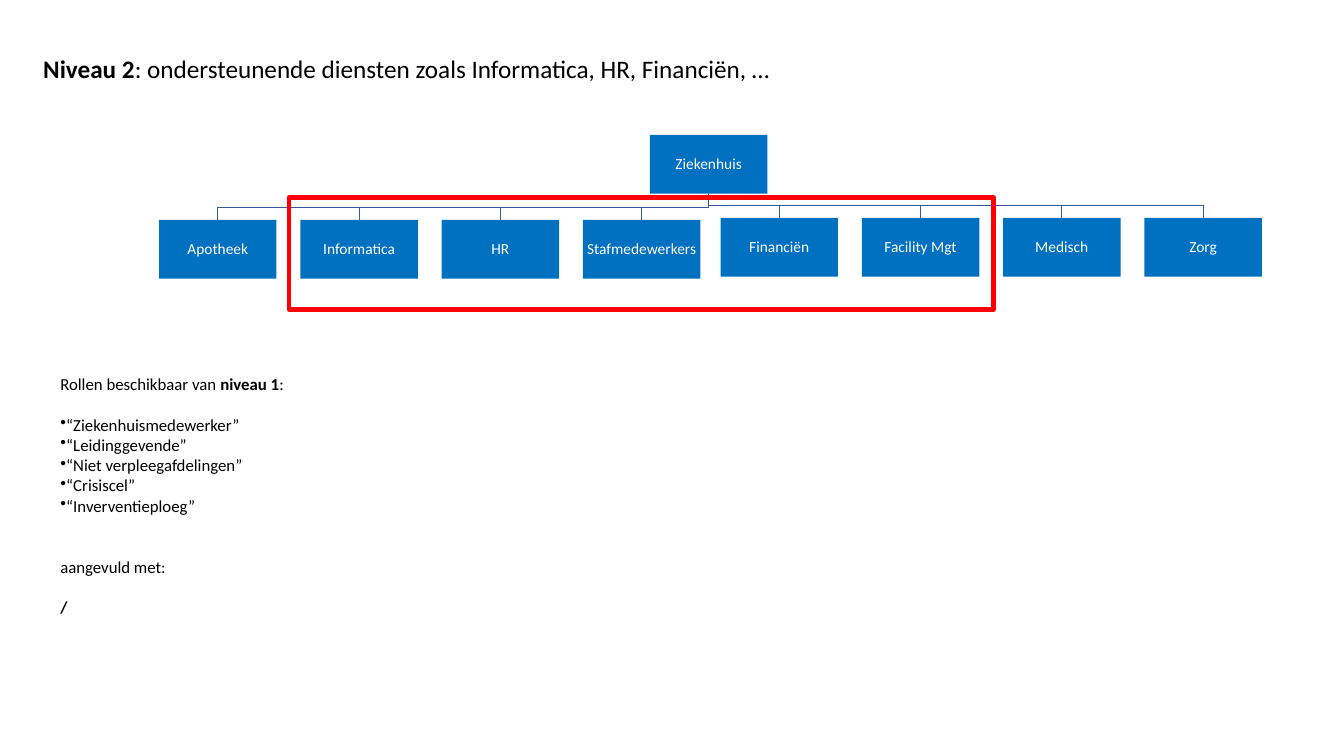
"""Build the hospital organisation slide for level 2."""
from dataclasses import dataclass

from lxml import etree
from pptx import Presentation
from pptx.dml.color import RGBColor
from pptx.enum.shapes import MSO_SHAPE
from pptx.enum.text import MSO_ANCHOR, MSO_AUTO_SIZE, PP_ALIGN
from pptx.oxml.ns import qn
from pptx.util import Cm, Pt

RECTANGLE = MSO_SHAPE.RECTANGLE
MIDDLE = MSO_ANCHOR.MIDDLE
CENTER = PP_ALIGN.CENTER
GROW = MSO_AUTO_SIZE.SHAPE_TO_FIT_TEXT


@dataclass(frozen=True)
class Theme:
    """Colours, font and type sizes of the slide."""
    font: str = "Calibri"
    unit_fill: RGBColor = RGBColor(0x00, 0x70, 0xC0)
    unit_text: RGBColor = RGBColor(0xFF, 0xFF, 0xFF)
    branch: RGBColor = RGBColor(0x36, 0x5B, 0x9D)
    highlight: RGBColor = RGBColor(0xFF, 0x00, 0x00)
    text: RGBColor = RGBColor(0x00, 0x00, 0x00)
    title_size: Pt = Pt(18)
    body_size: Pt = Pt(12)
    unit_size: Pt = Pt(11)
    text_line: Pt = Pt(14.65)


THEME = Theme()

UNIT_WIDTH, UNIT_HEIGHT = Cm(2.96), Cm(1.48)
UNIT_PITCH = Cm(3.56)
UNIT_INSET = Cm(0.03)
BRANCH_DROP = Cm(0.31)
ROOT_LEFT, ROOT_TOP = Cm(16.38), Cm(3.4)
UNIT_ROWS = [
    (Cm(4.01), Cm(5.54), ["Apotheek", "Informatica", "HR", "Stafmedewerkers"]),
    (Cm(18.16), Cm(5.49), ["Financiën", "Facility Mgt", "Medisch", "Zorg"]),
]
ROLES = ["“Ziekenhuismedewerker”", "“Leidinggevende”", "“Niet verpleegafdelingen”",
         "“Crisiscel”", "“Inverventieploeg”"]


def style_font(font, size, color, bold=False):
    """Apply the theme font with a size, colour and weight."""
    font.name = THEME.font
    font.size = size
    font.color.rgb = color
    font.bold = bold


def add_spans(para, spans, size):
    """Fill a paragraph with (text, bold) spans."""
    for text, bold in spans:
        span = para.add_run()
        span.text = text
        style_font(span.font, size, THEME.text, bold)


def add_text_box(page, left, top, width, height, wrap):
    """Add an empty growing text box and return its text frame."""
    frame = page.shapes.add_textbox(left, top, width, height).text_frame
    frame.word_wrap = wrap
    frame.auto_size = GROW
    return frame


def add_bullet(para):
    """Give a paragraph a hanging round bullet."""
    properties = para._p.get_or_add_pPr()
    properties.set("marL", "0")
    properties.set("indent", str(-Cm(0.79)))
    etree.SubElement(properties, qn("a:buChar")).set("char", "•")


def add_unit(page, left, top, name):
    """Add one box of the organisation chart."""
    box = page.shapes.add_shape(RECTANGLE, left, top, UNIT_WIDTH, UNIT_HEIGHT)
    box.shadow.inherit = False
    box.fill.solid()
    box.fill.fore_color.rgb = THEME.unit_fill
    box.line.fill.background()
    frame = box.text_frame
    frame.word_wrap = True
    frame.vertical_anchor = MIDDLE
    frame.margin_left = frame.margin_right = UNIT_INSET
    frame.margin_top = frame.margin_bottom = UNIT_INSET
    frame.text = name
    para = frame.paragraphs[0]
    para.alignment = CENTER
    para.line_spacing = 0.9
    style_font(para.runs[0].font, THEME.unit_size, THEME.unit_text)


def add_branch(page, left, top):
    """Draw the elbow line from the root box to the unit at left, top."""
    start_x, start_y = ROOT_LEFT + UNIT_WIDTH // 2, ROOT_TOP + UNIT_HEIGHT
    end_x, turn_y = left + UNIT_WIDTH // 2, top - BRANCH_DROP
    builder = page.shapes.build_freeform(start_x, start_y)
    builder.add_line_segments(
        [(start_x, turn_y), (end_x, turn_y), (end_x, top)], close=False)
    branch = builder.convert_to_shape()
    branch.shadow.inherit = False
    branch.fill.background()
    branch.line.color.rgb = THEME.branch
    branch.line.width = Pt(0.5)


def add_organisation(page):
    """Add the branches and then the boxes of the chart."""
    units = [(left + index * UNIT_PITCH, top, name)
             for left, top, names in UNIT_ROWS
             for index, name in enumerate(names)]
    for left, top, _ in units:
        add_branch(page, left, top)
    add_unit(page, ROOT_LEFT, ROOT_TOP, "Ziekenhuis")
    for unit in units:
        add_unit(page, *unit)


def add_title(page):
    """Add the slide heading."""
    frame = add_text_box(page, Cm(0.84), Cm(1.22), Cm(28.32), Cm(1.02), True)
    add_spans(frame.paragraphs[0], [
        ("Niveau 2", True),
        (": ondersteunende diensten zoals Informatica, HR, Financiën, …", False),
    ], THEME.title_size)


def add_highlight(page):
    """Frame the supporting services."""
    box = page.shapes.add_shape(RECTANGLE, Cm(7.29), Cm(4.98), Cm(17.75), Cm(2.82))
    box.shadow.inherit = False
    box.fill.background()
    box.line.color.rgb = THEME.highlight
    box.line.width = Pt(3)


def add_roles(page):
    """Add the list of available roles and its supplement."""
    frame = add_text_box(page, Cm(1.27), Cm(9.3), Cm(6.2), Cm(8.46), False)
    add_spans(frame.paragraphs[0], [
        ("Rollen beschikbaar van ", False), ("niveau 1", True), (":", False),
    ], THEME.body_size)
    for index, role in enumerate(ROLES):
        para = frame.add_paragraph()
        if index == 0:
            para.space_before = THEME.text_line
        add_bullet(para)
        add_spans(para, [(role, False)], THEME.body_size)
    for text, bold, gap_lines in [("aangevuld met:", False, 2), ("/", True, 1)]:
        para = frame.add_paragraph()
        para.space_before = Pt(THEME.text_line.pt * gap_lines)
        add_spans(para, [(text, bold)], THEME.body_size)


def main():
    """Build and save the deck."""
    deck = Presentation()
    deck.slide_width, deck.slide_height = Cm(33.87), Cm(19.05)
    page = deck.slides.add_slide(deck.slide_layouts[6])
    add_organisation(page)
    add_title(page)
    add_highlight(page)
    add_roles(page)
    deck.save("out.pptx")


if __name__ == "__main__":
    main()
